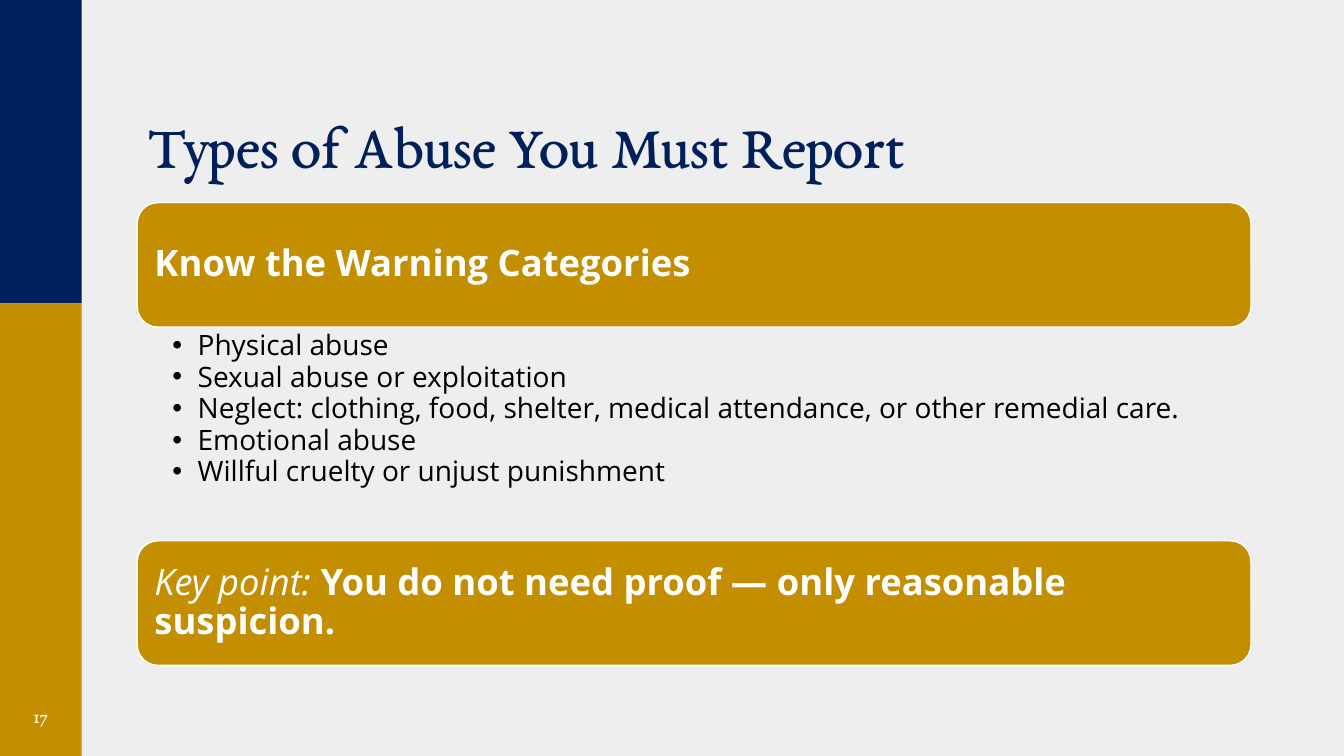
from lxml.etree import SubElement
from pptx import Presentation
from pptx.dml.color import RGBColor
from pptx.enum.shapes import MSO_SHAPE
from pptx.enum.text import MSO_ANCHOR, MSO_AUTO_SIZE, PP_ALIGN
from pptx.oxml.ns import qn
from pptx.util import Pt

NAVY, GOLD, WHITE, BLACK, PAPER = "00205C", "C38F00", "FFFFFF", "000000", "EEEEEE"
SERIF, SANS = "EB Garamond", "Open Sans"
SLIDE_WIDTH, SLIDE_HEIGHT = 960, 540
RAIL_WIDTH, NAVY_HEIGHT = 58.3, 216.7
CONTENT_LEFT, CONTENT_WIDTH = 98, 795.6
CARD_HEIGHT, LIST_HEIGHT = 89, 152.6
CARD_TOP = 144.7

ABUSE_TYPES = [
    "Physical abuse",
    "Sexual abuse or exploitation",
    "Neglect: clothing, food, shelter, medical attendance, or other remedial care.",
    "Emotional abuse",
    "Willful cruelty or unjust punishment",
]


def paint(color_format, color):
    color_format.rgb = RGBColor.from_string(color)


def fill_with(fill, color):
    fill.solid()
    paint(fill.fore_color, color)


def set_font(font, name, size, color):
    font.name = name
    font.size = Pt(size)
    paint(font.color, color)


def place(part, left, top, width, height):
    part.left, part.top = Pt(left), Pt(top)
    part.width, part.height = Pt(width), Pt(height)


def set_frame(frame, anchor, left, top, right, bottom):
    frame.word_wrap = True
    frame.auto_size = MSO_AUTO_SIZE.NONE
    frame.vertical_anchor = anchor
    frame.margin_left, frame.margin_top = Pt(left), Pt(top)
    frame.margin_right, frame.margin_bottom = Pt(right), Pt(bottom)


def add_panel(slide, preset, color, left, top, width, height):
    panel = slide.shapes.add_shape(preset, Pt(left), Pt(top), Pt(width), Pt(height))
    panel.shadow.inherit = False
    fill_with(panel.fill, color)
    panel.line.fill.background()
    return panel


def add_rail(slide, left, top, width, height):
    add_panel(slide, MSO_SHAPE.RECTANGLE, NAVY, left, top, width, NAVY_HEIGHT)
    add_panel(slide, MSO_SHAPE.RECTANGLE, GOLD, left, top + NAVY_HEIGHT,
              width, height - NAVY_HEIGHT)
    page_number = slide.shapes.add_textbox(
        Pt(left + 10.8), Pt(top + height - 43.2), Pt(width - 21.6), Pt(28.8))
    set_frame(page_number.text_frame, MSO_ANCHOR.MIDDLE, 0, 3.6, 0, 3.6)
    paragraph = page_number.text_frame.paragraphs[0]
    paragraph.text = "17"
    paragraph.alignment = PP_ALIGN.CENTER
    set_font(paragraph.font, SERIF, 14, WHITE)


def fill_title(slide, left, top, width, height):
    title = slide.shapes.title
    place(title, left, top, width, height)
    set_frame(title.text_frame, MSO_ANCHOR.BOTTOM, 7.2, 3.6, 7.2, 3.6)
    paragraph = title.text_frame.paragraphs[0]
    paragraph.text = "Types of Abuse You Must Report"
    paragraph.alignment = PP_ALIGN.LEFT
    paragraph.line_spacing = 0.9
    set_font(paragraph.font, SERIF, 44, NAVY)


def add_card(slide, lead, statement, left, top, width, height):
    card = add_panel(slide, MSO_SHAPE.ROUNDED_RECTANGLE, GOLD, left, top, width, height)
    fill_with(card.line.fill, WHITE)
    card.line.width = Pt(1)
    set_frame(card.text_frame, MSO_ANCHOR.MIDDLE, 8, 8, 8, 8)
    paragraph = card.text_frame.paragraphs[0]
    paragraph.alignment = PP_ALIGN.LEFT
    paragraph.line_spacing = 0.9
    set_font(paragraph.font, SANS, 26, WHITE)
    if lead:
        lead_run = paragraph.add_run()
        lead_run.text = lead
        lead_run.font.italic = True
    statement_run = paragraph.add_run()
    statement_run.text = statement
    statement_run.font.bold = True
    for run in paragraph.runs:
        set_font(run.font, SANS, 26, WHITE)


def add_bullet(paragraph):
    properties = paragraph._p.get_or_add_pPr()
    properties.set("marL", str(Pt(18)))
    properties.set("indent", str(-Pt(18)))
    SubElement(properties, qn("a:buFont"), typeface="Arial")
    SubElement(properties, qn("a:buChar"), char="•")


def fill_abuse_list(slide, left, top, width, height):
    abuse_list = slide.placeholders[1]
    place(abuse_list, left, top, width, height)
    frame = abuse_list.text_frame
    set_frame(frame, MSO_ANCHOR.TOP, 25.2, 2.9, 14.4, 2.9)
    frame.text = "\n".join(ABUSE_TYPES)
    for paragraph in frame.paragraphs:
        add_bullet(paragraph)
        paragraph.alignment = PP_ALIGN.LEFT
        paragraph.line_spacing = 0.9
        paragraph.space_before = Pt(0)
        paragraph.space_after = Pt(1)
        set_font(paragraph.font, SANS, 20, BLACK)


def build_abuse_slide(presentation):
    slide = presentation.slides.add_slide(presentation.slide_layouts[1])
    fill_with(slide.background.fill, PAPER)
    list_top = CARD_TOP + CARD_HEIGHT
    add_rail(slide, 0, 0, RAIL_WIDTH, SLIDE_HEIGHT)
    fill_title(slide, CONTENT_LEFT, 28.8, CONTENT_WIDTH, 104.4)
    add_card(slide, "", "Know the Warning Categories",
             CONTENT_LEFT, CARD_TOP, CONTENT_WIDTH, CARD_HEIGHT)
    fill_abuse_list(slide, CONTENT_LEFT, list_top, CONTENT_WIDTH, LIST_HEIGHT)
    add_card(slide, "Key point: ", "You do not need proof — only reasonable suspicion.",
             CONTENT_LEFT, list_top + LIST_HEIGHT, CONTENT_WIDTH, CARD_HEIGHT)


def main():
    presentation = Presentation()
    presentation.slide_width = Pt(SLIDE_WIDTH)
    presentation.slide_height = Pt(SLIDE_HEIGHT)
    build_abuse_slide(presentation)
    presentation.save("out.pptx")


if __name__ == "__main__":
    main()
